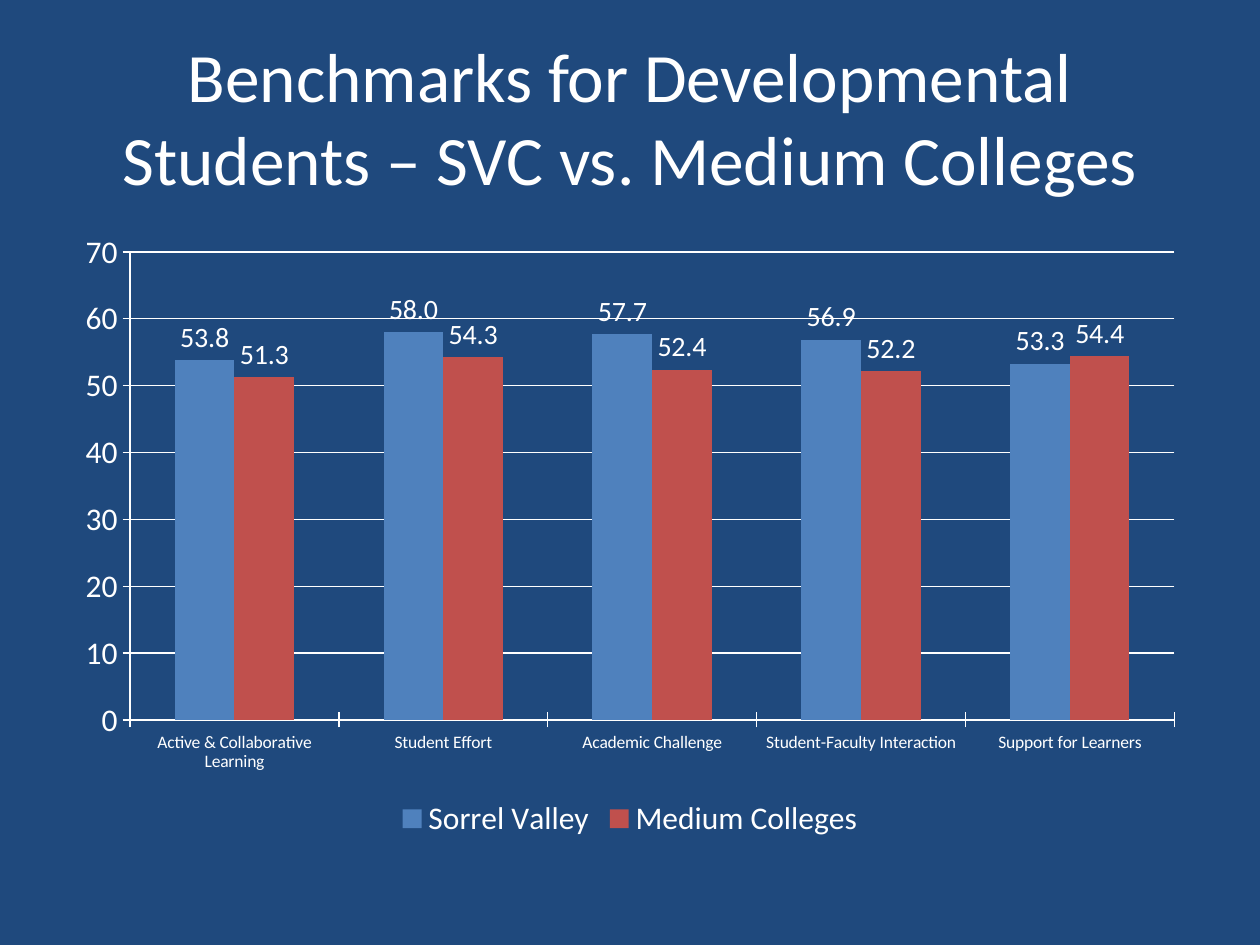
from dataclasses import dataclass

from pptx import Presentation
from pptx.chart.data import CategoryChartData
from pptx.dml.color import RGBColor
from pptx.enum.chart import XL_CHART_TYPE, XL_LABEL_POSITION, XL_LEGEND_POSITION, XL_TICK_MARK
from pptx.enum.text import MSO_ANCHOR, MSO_AUTO_SIZE, PP_ALIGN
from pptx.util import Inches, Pt


@dataclass(frozen=True)
class Theme:
    font: str = "Calibri"
    background: RGBColor = RGBColor(0x1F, 0x49, 0x7D)
    foreground: RGBColor = RGBColor(0xFF, 0xFF, 0xFF)
    title_size: float = 39.6
    scale_size: float = 18
    label_size: float = 16
    category_size: float = 10


@dataclass(frozen=True)
class Series:
    name: str
    values: tuple[float, ...]
    color: RGBColor


THEME = Theme()
CATEGORIES = (
    "Active & Collaborative Learning",
    "Student Effort",
    "Academic Challenge",
    "Student-Faculty Interaction",
    "Support for Learners",
)
COLLEGES = (
    Series("Sorrel Valley", (53.8, 58.0, 57.7, 56.9, 53.3), RGBColor(0x4F, 0x81, 0xBD)),
    Series("Medium Colleges", (51.3, 54.3, 52.4, 52.2, 54.4), RGBColor(0xC0, 0x50, 0x4D)),
)


def style_font(font, size: float) -> None:
    font.name = THEME.font
    font.size = Pt(size)
    font.color.rgb = THEME.foreground


def style_line(line) -> None:
    line.color.rgb = THEME.foreground
    line.width = Pt(0.75)


def add_title(slide, text: str) -> None:
    title = slide.shapes.title
    title.left, title.top = Inches(0.5), Inches(0.3)
    title.width, title.height = Inches(9), Inches(1.25)
    frame = title.text_frame
    frame.word_wrap = True
    frame.auto_size = MSO_AUTO_SIZE.NONE
    frame.vertical_anchor = MSO_ANCHOR.MIDDLE
    para = frame.paragraphs[0]
    para.alignment = PP_ALIGN.CENTER
    span = para.add_run()
    span.text = text
    style_font(span.font, THEME.title_size)


def style_axis(axis, size: float) -> None:
    axis.major_tick_mark = XL_TICK_MARK.CROSS
    axis.minor_tick_mark = XL_TICK_MARK.NONE
    style_line(axis.format.line)
    style_font(axis.tick_labels.font, size)


def style_series(bars, series: Series) -> None:
    bars.format.fill.solid()
    bars.format.fill.fore_color.rgb = series.color
    bars.invert_if_negative = False
    labels = bars.data_labels
    labels.show_value = True
    labels.position = XL_LABEL_POSITION.OUTSIDE_END
    labels.number_format = "0.0"
    labels.number_format_is_linked = False
    style_font(labels.font, THEME.label_size)


def add_benchmark_chart(slide) -> None:
    data = CategoryChartData()
    data.categories = CATEGORIES
    for series in COLLEGES:
        data.add_series(series.name, series.values)
    chart = slide.shapes.add_chart(
        XL_CHART_TYPE.COLUMN_CLUSTERED,
        Inches(0.5), Inches(1.75), Inches(9), Inches(4.95), data,
    ).chart
    chart.has_title = False
    style_font(chart.font, THEME.category_size)

    style_axis(chart.category_axis, THEME.category_size)
    scale = chart.value_axis
    style_axis(scale, THEME.scale_size)
    scale.minimum_scale, scale.maximum_scale = 0, 70
    scale.major_unit = 10
    scale.has_major_gridlines = True
    style_line(scale.major_gridlines.format.line)
    scale.tick_labels.number_format = "0"
    scale.tick_labels.number_format_is_linked = False

    chart.has_legend = True
    chart.legend.position = XL_LEGEND_POSITION.BOTTOM
    chart.legend.include_in_layout = False
    style_font(chart.legend.font, THEME.scale_size)

    plot = chart.plots[0]
    plot.vary_by_categories = False
    plot.gap_width = 150
    plot.overlap = 0
    for bars, series in zip(plot.series, COLLEGES):
        style_series(bars, series)


def main() -> None:
    deck = Presentation()
    deck.slide_width, deck.slide_height = Inches(10), Inches(7.5)
    page = deck.slides.add_slide(deck.slide_layouts[5])
    page.background.fill.solid()
    page.background.fill.fore_color.rgb = THEME.background
    add_title(page, "Benchmarks for Developmental Students – SVC vs. Medium Colleges")
    add_benchmark_chart(page)
    deck.save("out.pptx")


if __name__ == "__main__":
    main()
